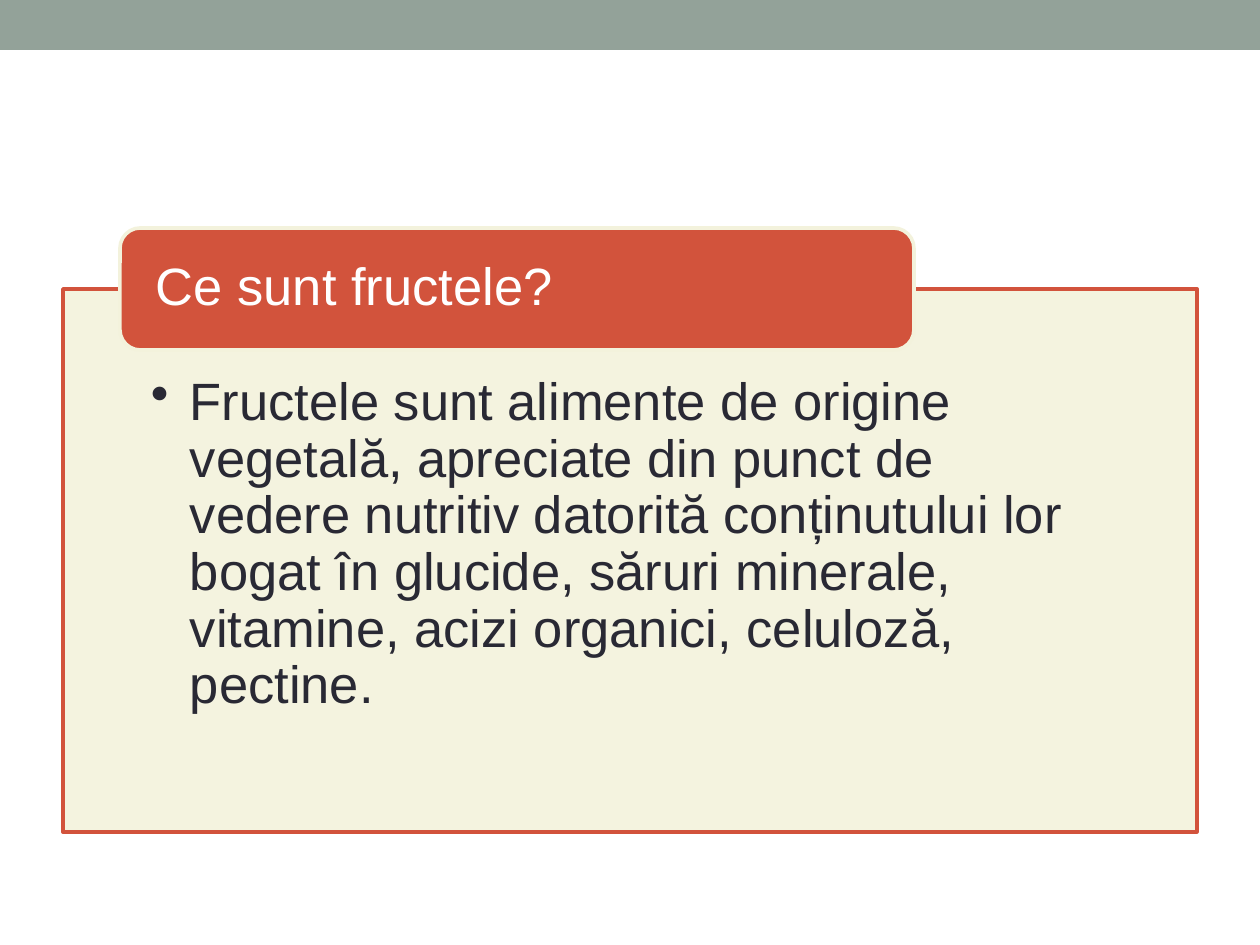
from dataclasses import dataclass
from typing import Optional

from lxml import etree
from pptx import Presentation
from pptx.dml.color import RGBColor
from pptx.enum.shapes import MSO_SHAPE
from pptx.enum.text import MSO_ANCHOR, PP_ALIGN
from pptx.oxml.ns import qn
from pptx.util import Emu, Pt

RECTANGLE = MSO_SHAPE.RECTANGLE
ROUNDED = MSO_SHAPE.ROUNDED_RECTANGLE
TOP = MSO_ANCHOR.TOP
MIDDLE = MSO_ANCHOR.MIDDLE
LEFT = PP_ALIGN.LEFT
EMU_PER_PX = 914400 / 126
BLANK_LAYOUT = 6


@dataclass(frozen=True)
class Theme:
    sage: str = "93A299"
    cream: str = "F3F2DC"
    brick: str = "D2533C"
    ink: str = "292934"
    white: str = "FFFFFF"
    font: str = "Arial"
    text_size: float = 30
    line_width: float = 2.08
    line_spacing: float = 0.9


@dataclass(frozen=True)
class Caption:
    text: str
    color: str
    insets: tuple[int, int, int, int]
    anchor: MSO_ANCHOR = TOP
    bullet_indent: int = 0


@dataclass(frozen=True)
class Panel:
    frame: tuple[int, int, int, int]
    fill: str
    outline: Optional[str] = None
    kind: MSO_SHAPE = RECTANGLE
    opacity: int = 100
    caption: Optional[Caption] = None


THEME = Theme()
PANELS = [
    Panel((0, 0, 1260, 50), THEME.sage),
    Panel(
        (63, 289, 1134, 543), THEME.cream, THEME.brick, opacity=90,
        caption=Caption(
            "Fructele sunt alimente de origine vegetală, apreciate din punct de "
            "vedere nutritiv datorită conținutului lor bogat în glucide, săruri "
            "minerale, vitamine, acizi organici, celuloză, pectine.",
            THEME.ink, (88, 86, 88, 29), bullet_indent=39,
        ),
    ),
    Panel(
        (120, 228, 794, 122), THEME.brick, THEME.cream, ROUNDED,
        caption=Caption("Ce sunt fructele?", THEME.white, (30, 0, 30, 0), MIDDLE),
    ),
]


def px(length: int) -> Emu:
    return Emu(round(length * EMU_PER_PX))


def set_values(target, values: dict) -> None:
    for name, value in values.items():
        setattr(target, name, value)


def add_bullet(paragraph, indent: int) -> None:
    properties = paragraph._p.get_or_add_pPr()
    properties.set("marL", str(px(indent)))
    properties.set("indent", str(-px(indent)))
    etree.SubElement(properties, qn("a:buChar"), char="•")


def write_caption(box, caption: Caption) -> None:
    frame = box.text_frame
    sides = ("margin_left", "margin_top", "margin_right", "margin_bottom")
    set_values(frame, dict(zip(sides, map(px, caption.insets))))
    set_values(frame, {"word_wrap": True, "vertical_anchor": caption.anchor})
    paragraph = frame.paragraphs[0]
    set_values(paragraph, {"alignment": LEFT, "line_spacing": THEME.line_spacing})
    if caption.bullet_indent:
        add_bullet(paragraph, caption.bullet_indent)
    span = paragraph.add_run()
    span.text = caption.text
    set_values(span.font, {"name": THEME.font, "size": Pt(THEME.text_size)})
    span.font.color.rgb = RGBColor.from_string(caption.color)


def draw_panel(page, panel: Panel) -> None:
    box = page.shapes.add_shape(panel.kind, *map(px, panel.frame))
    box.shadow.inherit = False
    box.fill.solid()
    box.fill.fore_color.rgb = RGBColor.from_string(panel.fill)
    if panel.opacity < 100:
        color = box._element.spPr.find(qn("a:solidFill")).find(qn("a:srgbClr"))
        etree.SubElement(color, qn("a:alpha"), val=str(panel.opacity * 1000))
    if panel.outline:
        box.line.color.rgb = RGBColor.from_string(panel.outline)
        box.line.width = Pt(THEME.line_width)
    else:
        box.line.fill.background()
    if panel.caption:
        write_caption(box, panel.caption)


def main() -> None:
    deck = Presentation()
    set_values(deck, {"slide_width": px(1260), "slide_height": px(945)})
    page = deck.slides.add_slide(deck.slide_layouts[BLANK_LAYOUT])
    for panel in PANELS:
        draw_panel(page, panel)
    deck.save("out.pptx")


if __name__ == "__main__":
    main()
